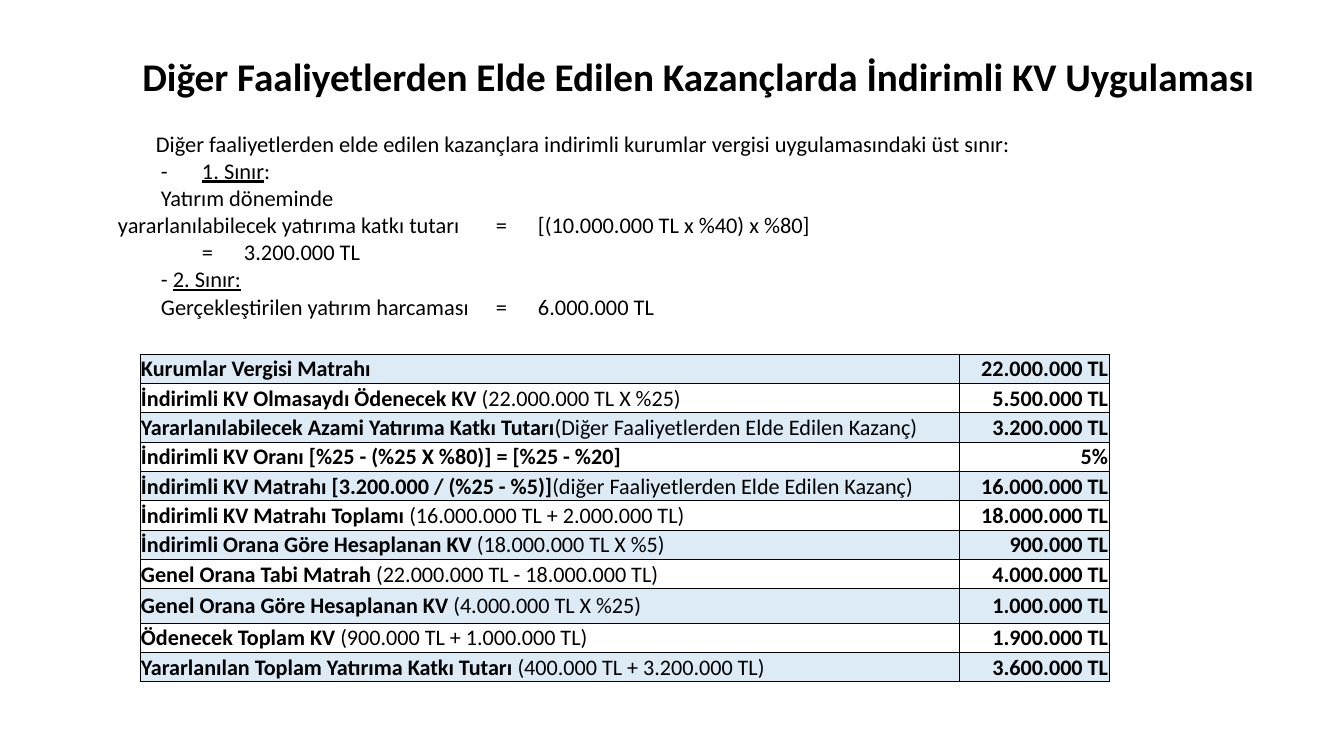
from dataclasses import dataclass
from lxml.etree import SubElement as Sub
from pptx import Presentation
from pptx.dml.color import RGBColor as Rgb
from pptx.enum.text import MSO_ANCHOR as Anchor, PP_ALIGN as Align
from pptx.oxml.ns import qn
from pptx.util import Pt


@dataclass(frozen=True)
class Theme:
    font: str = "Calibri"
    ink: str = "000000"
    band: str = "DDEBF7"
    plain: str = "FFFFFF"
    title: float = 33.6
    body: float = 19.2
    cell: float = 19
    rule: float = 0.5


THEME = Theme()
TITLE = "Diğer Faaliyetlerden Elde Edilen Kazançlarda İndirimli KV Uygulaması"
STOPS = (59, 372, 453)
LIMITS = [
    (38, (), [("Diğer faaliyetlerden elde edilen kazançlara indirimli kurumlar "
               "vergisi uygulamasındaki üst sınır:", False)]),
    (43, STOPS[:1], [("-\t", False), ("1. Sınır", True), (":", False)]),
    (43, (), [("Yatırım döneminde", False)]),
    (0, STOPS[1:], [("yararlanılabilecek yatırıma katkı tutarı\t=\t"
                     "[(10.000.000 TL x %40) x %80]", False)]),
    (43, STOPS[1:], [("\t=\t3.200.000 TL", False)]),
    (43, (), [("- ", False), ("2. Sınır:", True)]),
    (43, STOPS[1:], [("Gerçekleştirilen yatırım harcaması\t=\t6.000.000 TL", False)]),
]
ROWS = [
    ("Kurumlar Vergisi Matrahı", "", "22.000.000 TL"),
    ("İndirimli KV Olmasaydı Ödenecek KV ", "(22.000.000 TL X %25)", "5.500.000 TL"),
    ("Yararlanılabilecek Azami Yatırıma Katkı Tutarı",
     "(Diğer Faaliyetlerden Elde Edilen Kazanç)", "3.200.000 TL"),
    ("İndirimli KV Oranı [%25 - (%25 X %80)] = [%25 - %20]", "", "5%"),
    ("İndirimli KV Matrahı [3.200.000 / (%25 - %5)]",
     "(diğer Faaliyetlerden Elde Edilen Kazanç)", "16.000.000 TL"),
    ("İndirimli KV Matrahı Toplamı ", "(16.000.000 TL + 2.000.000 TL)", "18.000.000 TL"),
    ("İndirimli Orana Göre Hesaplanan KV ", "(18.000.000 TL X %5)", "900.000 TL"),
    ("Genel Orana Tabi Matrah ", "(22.000.000 TL - 18.000.000 TL)", "4.000.000 TL"),
    ("Genel Orana Göre Hesaplanan KV ", "(4.000.000 TL X %25)", "1.000.000 TL"),
    ("Ödenecek Toplam KV ", "(900.000 TL + 1.000.000 TL)", "1.900.000 TL"),
    ("Yararlanılan Toplam Yatırıma Katkı Tutarı ", "(400.000 TL + 3.200.000 TL)",
     "3.600.000 TL"),
]
TALL = 8


def px(size):
    return round(size * 914400 / 84)


def add_run(para, text, size, bold=False, line=False):
    run = para.add_run()
    run.text = text
    font = run.font
    font.name, font.size, font.bold = THEME.font, Pt(size), bold
    if line:
        font.underline = True
    font.color.rgb = Rgb.from_string(THEME.ink)


def add_box(slide, box, inset):
    frame = slide.shapes.add_textbox(*map(px, box)).text_frame
    frame.word_wrap = True
    frame.vertical_anchor = Anchor.TOP
    frame.margin_left = frame.margin_right = px(inset)
    frame.margin_top = frame.margin_bottom = px(inset)
    return frame


def add_title(slide, box):
    para = add_box(slide, box, 4).paragraphs[0]
    para.alignment = Align.CENTER
    add_run(para, TITLE, THEME.title, True)


def add_limits(slide, box):
    frame = add_box(slide, box, 0)
    for row, (indent, stops, runs) in enumerate(LIMITS):
        para = frame.add_paragraph() if row else frame.paragraphs[0]
        para.alignment = Align.JUSTIFY
        para.line_spacing = 0.7
        para.space_after = Pt(7.2)
        props = para._p.get_or_add_pPr()
        props.set("marL", "0")
        props.set("indent", str(px(indent)))
        if stops:
            tabs = Sub(props, qn("a:tabLst"))
            for stop in stops:
                Sub(tabs, qn("a:tab"), pos=str(px(stop)), algn="l")
        for text, line in runs:
            add_run(para, text, THEME.body, line=line)


def set_cell(cell, runs, align, fill):
    cell.margin_left = cell.margin_right = cell.margin_top = px(1)
    cell.margin_bottom = 0
    cell.vertical_anchor = Anchor.MIDDLE
    props = cell._tc.get_or_add_tcPr()
    for side in ("lnL", "lnR", "lnT", "lnB"):
        edge = Sub(props, qn(f"a:{side}"), w=str(Pt(THEME.rule)))
        Sub(Sub(edge, qn("a:solidFill")), qn("a:srgbClr"), val=THEME.ink)
    cell.fill.solid()
    cell.fill.fore_color.rgb = Rgb.from_string(fill)
    para = cell.text_frame.paragraphs[0]
    para.alignment = align
    for text, bold in runs:
        if text:
            add_run(para, text, THEME.cell, bold)


def add_sums(slide, box):
    left, top, width, height = box
    table = slide.shapes.add_table(len(ROWS), 2, *map(px, box)).table
    table.first_row = table.horz_banding = False
    sums, extra = 150, 5
    table.columns[0].width = px(width - sums)
    table.columns[1].width = px(sums)
    step = (height - extra) / len(ROWS)
    for row, (label, note, value) in enumerate(ROWS):
        table.rows[row].height = px(step + extra * (row == TALL))
        fill = THEME.plain if row % 2 else THEME.band
        set_cell(table.cell(row, 0), [(label, True), (note, False)], Align.JUSTIFY, fill)
        set_cell(table.cell(row, 1), [(value, True)], Align.RIGHT, fill)


def main():
    deck = Presentation()
    deck.slide_width, deck.slide_height = px(1344), px(756)
    slide = deck.slides.add_slide(deck.slide_layouts[6])
    add_title(slide, (111, 48, 1176, 81))
    add_limits(slide, (118, 137, 1123, 200))
    add_sums(slide, (140, 354, 969, 328))
    deck.save("out.pptx")


if __name__ == "__main__":
    main()
